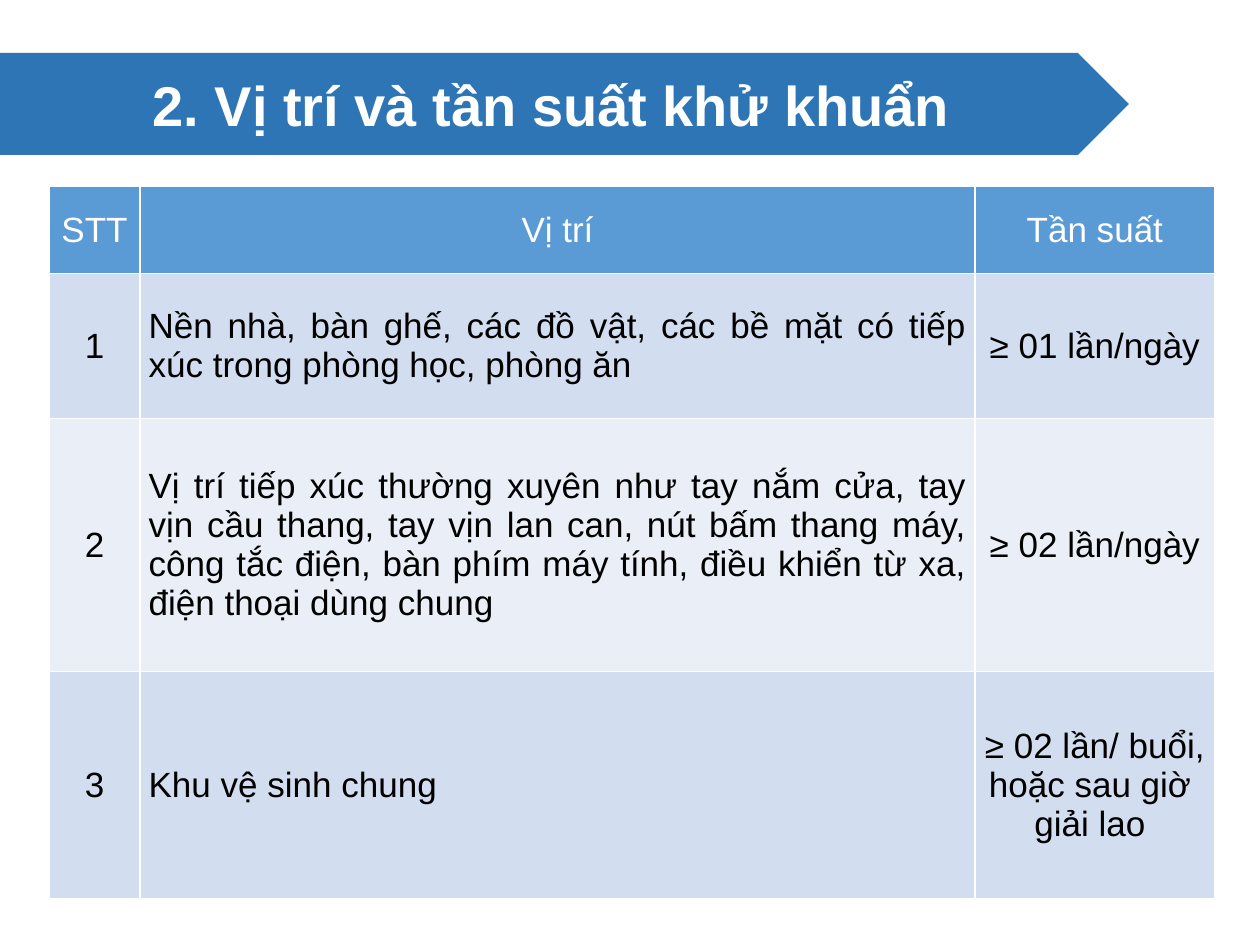
from pptx import Presentation
from pptx.dml.color import RGBColor
from pptx.enum.shapes import MSO_SHAPE
from pptx.enum.text import MSO_ANCHOR, PP_ALIGN
from pptx.util import Inches, Pt

PENTAGON = MSO_SHAPE.PENTAGON
MIDDLE = MSO_ANCHOR.MIDDLE
CENTER, JUSTIFY = PP_ALIGN.CENTER, PP_ALIGN.JUSTIFY

WHITE = RGBColor(0xFF, 0xFF, 0xFF)
BLACK = RGBColor(0x00, 0x00, 0x00)
BANNER_BLUE = RGBColor(0x2E, 0x75, 0xB6)
HEADER_BLUE = RGBColor(0x5B, 0x9B, 0xD5)
BANDS = (RGBColor(0xD2, 0xDE, 0xEF), RGBColor(0xEA, 0xEF, 0xF7))

FONT = "Arial"
TITLE = "2. Vị trí và tần suất khử khuẩn"
SCHEDULE = [
    ("STT", "Vị trí", "Tần suất"),
    ("1",
     "Nền nhà, bàn ghế, các đồ vật, các bề mặt có tiếp xúc trong phòng học, phòng ăn",
     "≥ 01 lần/ngày"),
    ("2",
     "Vị trí tiếp xúc thường xuyên như tay nắm cửa, tay vịn cầu thang, tay vịn lan can, "
     "nút bấm thang máy, công tắc điện, bàn phím máy tính, điều khiển từ xa, "
     "điện thoại dùng chung",
     "≥ 02 lần/ngày"),
    ("3", "Khu vệ sinh chung", "≥ 02 lần/ buổi, hoặc sau giờ \ngiải lao "),
]
COLUMN_WIDTHS = (0.72, 6.63, 1.9)
ROW_HEIGHTS = (0.69, 1.15, 2.01, 1.8)


def format_text(text_frame, size, color, bold, alignment):
    """Give every run of a text frame the same look."""
    for paragraph in text_frame.paragraphs:
        paragraph.alignment = alignment
        for run in paragraph.runs:
            run.font.name = FONT
            run.font.size = Pt(size)
            run.font.bold = bold
            run.font.color.rgb = color


def add_title_banner(slide, left, top, width, height):
    """Place the arrow-shaped title banner in the given box."""
    banner = slide.shapes.add_shape(PENTAGON, left, top, width, height)
    banner.shadow.inherit = False
    banner.fill.solid()
    banner.fill.fore_color.rgb = BANNER_BLUE
    banner.line.fill.background()
    banner.text_frame.text = TITLE
    banner.text_frame.word_wrap = True
    banner.text_frame.vertical_anchor = MIDDLE
    format_text(banner.text_frame, 32, WHITE, True, CENTER)


def fill_cell(cell, text, fill, color, alignment):
    """Write one table cell with its fill and alignment."""
    cell.fill.solid()
    cell.fill.fore_color.rgb = fill
    cell.vertical_anchor = MIDDLE
    cell.margin_left = cell.margin_right = Inches(0.07)
    cell.margin_top = cell.margin_bottom = Inches(0.05)
    cell.text_frame.text = text
    format_text(cell.text_frame, 20, color, False, alignment)


def add_schedule_table(slide, left, top, width, height):
    """Place the disinfection schedule in the given box."""
    schedule = slide.shapes.add_table(
        len(SCHEDULE), len(COLUMN_WIDTHS), left, top, width, height).table
    for column, column_width in zip(schedule.columns, COLUMN_WIDTHS):
        column.width = Inches(column_width)
    for row, row_height in zip(schedule.rows, ROW_HEIGHTS):
        row.height = Inches(row_height)
    for r, entries in enumerate(SCHEDULE):
        is_header = r == 0
        fill = HEADER_BLUE if is_header else BANDS[(r - 1) % 2]
        color = WHITE if is_header else BLACK
        for c, entry in enumerate(entries):
            alignment = JUSTIFY if c == 1 and not is_header else CENTER
            fill_cell(schedule.cell(r, c), entry, fill, color, alignment)


def main():
    """Build the slide and save it."""
    presentation = Presentation()
    presentation.slide_width = Inches(10)
    presentation.slide_height = Inches(7.5)
    slide = presentation.slides.add_slide(presentation.slide_layouts[6])
    add_title_banner(slide, Inches(0), Inches(0.42), Inches(8.96), Inches(0.81))
    add_schedule_table(slide, Inches(0.39), Inches(1.48),
                       Inches(sum(COLUMN_WIDTHS)), Inches(sum(ROW_HEIGHTS)))
    presentation.save("out.pptx")


if __name__ == "__main__":
    main()
